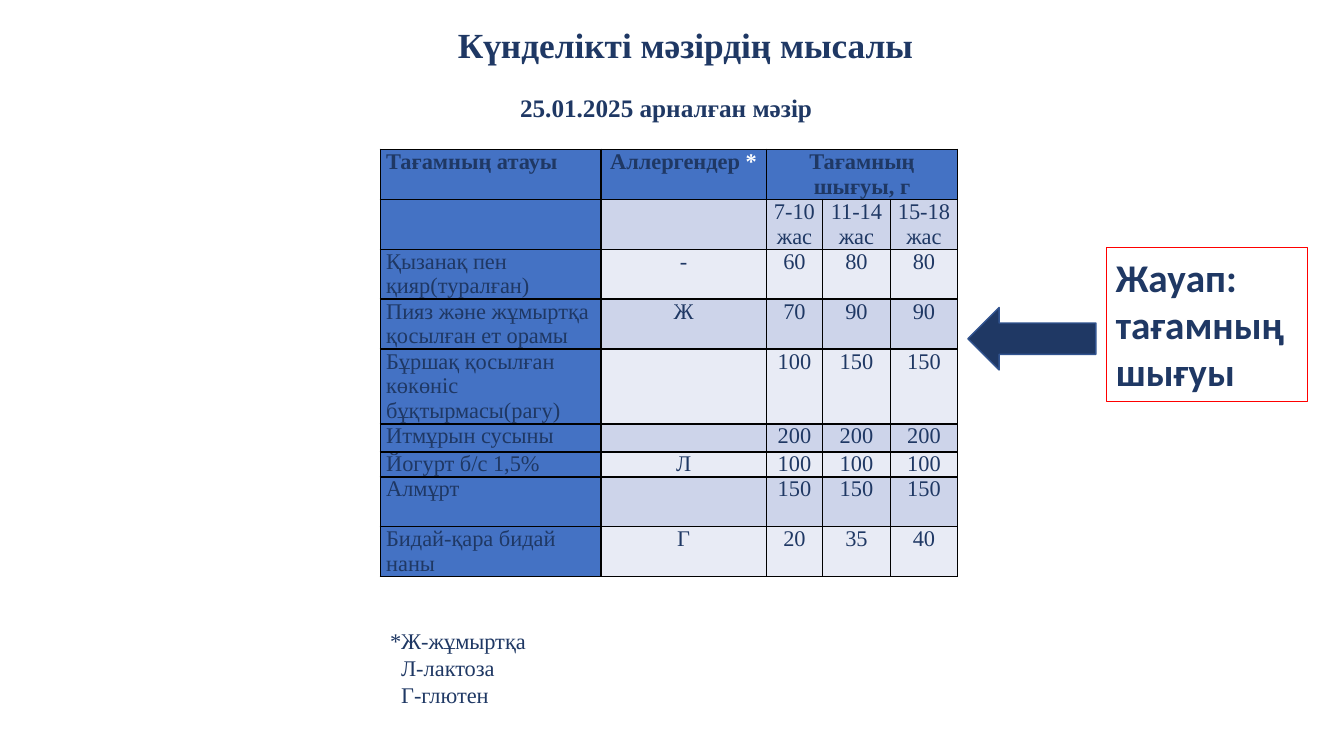
from dataclasses import dataclass

from lxml.etree import SubElement
from pptx import Presentation
from pptx.dml.color import RGBColor
from pptx.enum.shapes import MSO_SHAPE
from pptx.enum.text import MSO_ANCHOR, MSO_AUTO_SIZE, PP_ALIGN
from pptx.oxml.ns import qn
from pptx.util import Inches, Pt

TITLE = "Күнделікті мәзірдің мысалы"
DATE = "25.01.2025 арналған мәзір"
ANSWER = "Жауап: тағамның шығуы"
LEGEND = ["*Ж-жұмыртқа", "Л-лактоза", "Г-глютен"]
MENU = [
    ("Тағамның атауы", "Аллергендер *", "Тағамның шығуы, г", "", ""),
    ("", "", "7-10 жас", "11-14 жас", "15-18 жас"),
    ("Қызанақ пен қияр(туралған)", "-", "60", "80", "80"),
    ("Пияз және жұмыртқа қосылған ет орамы", "Ж", "70", "90", "90"),
    ("Бұршақ қосылған көкөніс бұқтырмасы(рагу)", "", "100", "150", "150"),
    ("Итмұрын сусыны", "", "200", "200", "200"),
    ("Йогурт б/с 1,5%", "Л", "100", "100", "100"),
    ("Алмұрт", "", "150", "150", "150"),
    ("Бидай-қара бидай наны", "Г", "20", "35", "40"),
]
COLS = [2.19, 1.64, 0.56, 0.67, 0.67]
LINE = 0.248  # height of one text line in the table, inches
LINES = [2, 2, 2, 2, 3, 1.12, 1, 2, 2]


@dataclass(frozen=True)
class Theme:
    navy: str = "1F3864"
    blue: str = "4472C4"
    edge: str = "31538F"
    red: str = "FF0000"
    white: str = "FFFFFF"
    black: str = "000000"
    bands: tuple = ("E8EBF5", "CDD4EA")
    serif: str = "Times New Roman"
    sans: str = "Calibri"
    head: float = 25.2
    date: int = 18
    body: int = 16
    large: int = 28


T = Theme()


def rgb(code):
    return RGBColor.from_string(code)


def write(frame, lines, size=T.body, font=T.serif, bold=False,
          align=PP_ALIGN.LEFT, space=None, pad=(0.1, 0.05),
          anchor=MSO_ANCHOR.TOP):
    """Fill a frame; a line is a string or a list of (text, colour) runs."""
    frame.word_wrap = True
    frame.vertical_anchor = anchor
    frame.margin_left = frame.margin_right = Inches(pad[0])
    frame.margin_top = frame.margin_bottom = Inches(pad[1])
    for i, line in enumerate(lines):
        para = frame.add_paragraph() if i else frame.paragraphs[0]
        para.alignment = align
        para.line_spacing = space
        para.font.size = Pt(size)
        runs = [(line, T.navy)] if isinstance(line, str) else line
        for text, color in runs:
            run = para.add_run()
            run.text = text
            run.font.size, run.font.name = Pt(size), font
            run.font.bold = bold
            run.font.color.rgb = rgb(color)


def text_box(slide, box, lines, **style):
    frame = slide.shapes.add_textbox(*map(Inches, box)).text_frame
    write(frame, lines, **style)
    return frame


def add_shape(slide, kind, box, line, width, fill=None):
    shape = slide.shapes.add_shape(kind, *map(Inches, box))
    shape.shadow.inherit = False
    if fill:
        shape.fill.solid()
        shape.fill.fore_color.rgb = rgb(fill)
    else:
        shape.fill.background()
    shape.line.color.rgb = rgb(line)
    shape.line.width = Pt(width)
    return shape


def paint(cell, fill):
    """Set black borders, then the fill, in the order the schema asks for."""
    props = cell._tc.get_or_add_tcPr()
    for side in ("a:lnL", "a:lnR", "a:lnT", "a:lnB"):
        edge = SubElement(props, qn(side), w=str(Pt(1)))
        solid = SubElement(edge, qn("a:solidFill"))
        SubElement(solid, qn("a:srgbClr"), val=T.black)
    cell.fill.solid()
    cell.fill.fore_color.rgb = rgb(fill)


def add_menu(slide, left, top):
    rows = [LINE * n for n in LINES]
    box = (left, top, sum(COLS), sum(rows))
    table = slide.shapes.add_table(len(MENU), len(COLS),
                                   *map(Inches, box)).table
    for col, width in zip(table.columns, COLS):
        col.width = Inches(width)
    for row, height in zip(table.rows, rows):
        row.height = Inches(height)
    table.cell(0, 2).merge(table.cell(0, 4))
    for r, items in enumerate(MENU):
        for c, text in enumerate(items):
            cell = table.cell(r, c)
            paint(cell, T.blue if r == 0 or c == 0 else T.bands[r % 2])
            line = text
            if r == 0 and text.endswith("*"):
                line = [(text[:-1], T.navy), ("*", T.white)]
            write(cell.text_frame, [line] if text else [[]], bold=r == 0,
                  align=PP_ALIGN.CENTER if c else PP_ALIGN.LEFT,
                  pad=(0.06, 0))
            cell.margin_left = cell.margin_right = Inches(0.06)
            cell.margin_top = cell.margin_bottom = 0


def main():
    deck = Presentation()
    deck.slide_width, deck.slide_height = Inches(13.33), Inches(7.5)
    slide = deck.slides.add_slide(deck.slide_layouts[5])

    left = 3.77
    add_menu(slide, left, 1.48)
    legend = text_box(slide, (left, 6.17, 1.89, 0.91), LEGEND)
    for para in legend.paragraphs[1:]:
        para._p.get_or_add_pPr().set("marL", str(Inches(0.11)))
    text_box(slide, (5.06, 0.87, 3.86, 0.71), [DATE], size=T.date, bold=True)

    title = slide.shapes.title
    title.left, title.top, title.width, title.height = map(
        Inches, (2.38, 0.29, 8.84, 0.71))
    write(title.text_frame, [TITLE], size=T.head, bold=True,
          align=PP_ALIGN.CENTER, space=0.7)
    title.text_frame.auto_size = MSO_AUTO_SIZE.NONE

    answer = add_shape(slide, MSO_SHAPE.RECTANGLE, (10.97, 2.46, 2, 1.52),
                       T.red, 0.75)
    write(answer.text_frame, [ANSWER], size=T.large, font=T.sans, bold=True)
    add_shape(slide, MSO_SHAPE.LEFT_ARROW, (9.6, 3.05, 1.27, 0.62),
              T.edge, 1, T.navy)
    deck.save("out.pptx")


if __name__ == "__main__":
    main()
